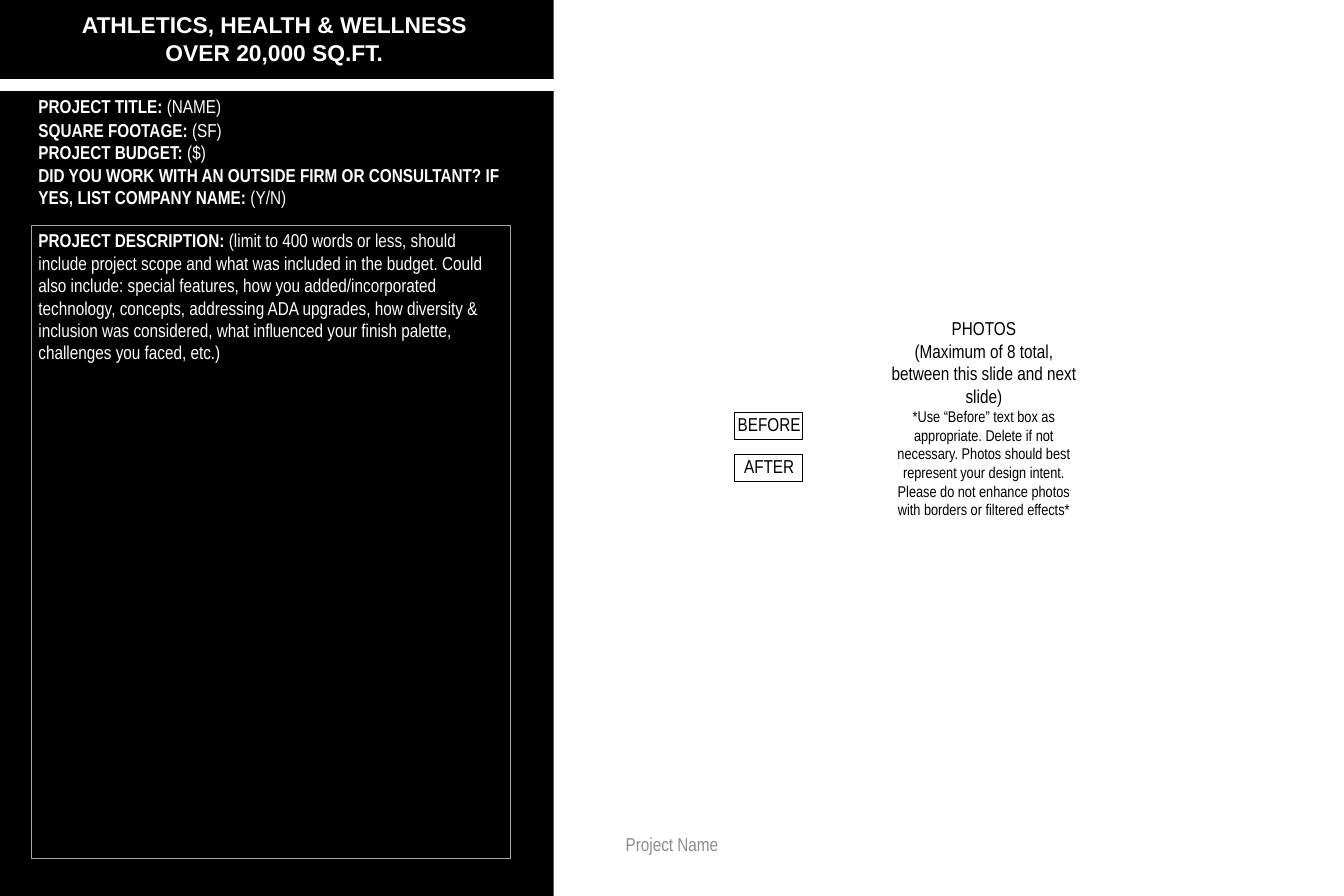
from dataclasses import dataclass

from pptx import Presentation
from pptx.dml.color import RGBColor
from pptx.enum.shapes import MSO_SHAPE
from pptx.enum.text import MSO_ANCHOR, MSO_AUTO_SIZE, PP_ALIGN
from pptx.util import Pt


@dataclass(frozen=True)
class Theme:
    """Colours, fonts and type sizes of the slide."""
    black: RGBColor = RGBColor(0x00, 0x00, 0x00)
    white: RGBColor = RGBColor(0xFF, 0xFF, 0xFF)
    footer: RGBColor = RGBColor(0x8C, 0x8C, 0x8C)
    frame: RGBColor = RGBColor(0xA6, 0xA6, 0xA6)
    heading_font: str = "Arial"
    body_font: str = "Arial Narrow"
    heading: int = 22
    body: int = 18
    note: int = 15


THEME = Theme()
INSETS = (7.2, 3.6, 7.2, 3.6)
CENTRED_INSETS = (1.5, 0, 0, 0)

PROJECT_TITLE = [("PROJECT TITLE: ", "(NAME)")]
PROJECT_FACTS = [
    ("SQUARE FOOTAGE: ", "(SF)"),
    ("PROJECT BUDGET: ", "($)"),
    ("DID YOU WORK WITH AN OUTSIDE FIRM OR CONSULTANT? IF YES, LIST COMPANY NAME: ", "(Y/N)"),
]
DESCRIPTION = [(
    "PROJECT DESCRIPTION: ",
    "(limit to 400 words or less, should include project scope and what was included in "
    "the budget. Could also include: special features, how you added/incorporated "
    "technology, concepts, addressing ADA upgrades, how diversity & inclusion was "
    "considered, what influenced your finish palette, challenges you faced, etc.)",
)]
PHOTO_LINES = [
    ("PHOTOS", THEME.body),
    ("(Maximum of 8 total, between this slide and next slide)", THEME.body),
    ("*Use “Before” text box as appropriate. Delete if not necessary. Photos should best "
     "represent your design intent. Please do not enhance photos with borders or filtered "
     "effects*", THEME.note),
]


def add_box(slide, box, fill=None, line=None, line_width=0.75):
    """Add a rectangle with an optional fill and outline."""
    shape = slide.shapes.add_shape(MSO_SHAPE.RECTANGLE, *map(Pt, box))
    shape.shadow.inherit = False
    if fill is None:
        shape.fill.background()
    else:
        shape.fill.solid()
        shape.fill.fore_color.rgb = fill
    if line is None:
        shape.line.fill.background()
    else:
        shape.line.color.rgb = line
        shape.line.width = Pt(line_width)
    return shape


def set_frame(shape, insets):
    """Wrap the text from the top of the shape and return its frame."""
    frame = shape.text_frame
    frame.word_wrap = True
    frame.auto_size = MSO_AUTO_SIZE.NONE
    frame.vertical_anchor = MSO_ANCHOR.TOP
    frame.margin_left, frame.margin_top, frame.margin_right, frame.margin_bottom = map(Pt, insets)
    return frame


def style_font(font, name, size, color, bold=False):
    """Set the typeface, size, colour and weight of a font."""
    font.name, font.size, font.bold = name, Pt(size), bold
    font.color.rgb = color


def write_centred(shape, lines, color, insets=CENTRED_INSETS):
    """Write centred paragraphs given as text and size pairs."""
    frame = set_frame(shape, insets)
    for index, (text, size) in enumerate(lines):
        paragraph = frame.add_paragraph() if index else frame.paragraphs[0]
        paragraph.text = text
        paragraph.alignment = PP_ALIGN.CENTER
        style_font(paragraph.font, THEME.body_font, size, color)


def write_fields(shape, fields):
    """Write left-aligned paragraphs with a bold label and a plain value."""
    frame = set_frame(shape, INSETS)
    for index, (label, value) in enumerate(fields):
        paragraph = frame.add_paragraph() if index else frame.paragraphs[0]
        paragraph.alignment = PP_ALIGN.LEFT
        style_font(paragraph.font, THEME.body_font, THEME.body, THEME.white)
        label_run = paragraph.add_run()
        label_run.text = label
        label_run.font.bold = True
        paragraph.add_run().text = value


def add_heading(slide, box):
    """Place the category title on its black band."""
    left, top, width, height = box
    add_box(slide, box, fill=THEME.black)
    title = slide.shapes.title
    slide.shapes._spTree.append(title._element)
    title.left, title.top = Pt(left + 18), Pt(top + 7)
    title.width, title.height = Pt(width - 41), Pt(height - 16)
    frame = set_frame(title, INSETS)
    frame.text = "ATHLETICS, HEALTH & WELLNESS\nOVER 20,000 SQ.FT."
    for paragraph in frame.paragraphs:
        paragraph.alignment = PP_ALIGN.CENTER
        style_font(paragraph.font, THEME.heading_font, THEME.heading, THEME.white, True)


def add_project_panel(slide, box):
    """Place the project fields and the framed description on a black panel."""
    left, top, width, height = box
    inner_left, inner_width = left + 30, width - 72
    add_box(slide, box, fill=THEME.black)
    for offset, field_height, fields in ((0, 51, PROJECT_TITLE), (23, 94, PROJECT_FACTS)):
        field_box = (inner_left, top + offset, inner_width, field_height)
        write_fields(slide.shapes.add_textbox(*map(Pt, field_box)), fields)
    frame_box = (inner_left, top + 129.5, inner_width, height - 166)
    write_fields(add_box(slide, frame_box, line=THEME.frame, line_width=0.25), DESCRIPTION)


def add_photo_area(slide, box):
    """Place the photo guidance and the before and after labels."""
    left, top, width, height = box
    guidance_box = (left + 144, top, width - 144, height)
    guidance = slide.shapes.add_textbox(*map(Pt, guidance_box))
    write_centred(guidance, PHOTO_LINES, THEME.black)
    for index, text in enumerate(("BEFORE", "AFTER")):
        label_box = (left, top + 92 + index * 40.5, 66, 25.5)
        label = add_box(slide, label_box, line=THEME.black)
        write_centred(label, [(text, THEME.body)], THEME.black)


def add_footer(slide, box):
    """Place the project name at the foot of the slide."""
    footer = slide.shapes.add_textbox(*map(Pt, box))
    write_centred(footer, [("Project Name", THEME.body)], THEME.footer, (0, 0, 0, 0))


def main():
    """Build and save the project entry slide."""
    presentation = Presentation()
    presentation.slide_width, presentation.slide_height = Pt(1296), Pt(864)
    slide = presentation.slides.add_slide(presentation.slide_layouts[5])
    add_heading(slide, (0, 0, 534, 76))
    add_project_panel(slide, (0, 88, 534, 776))
    add_photo_area(slide, (708, 306, 336, 210))
    add_footer(slide, (440.5, 803.5, 415, 43))
    presentation.save("out.pptx")


if __name__ == "__main__":
    main()
